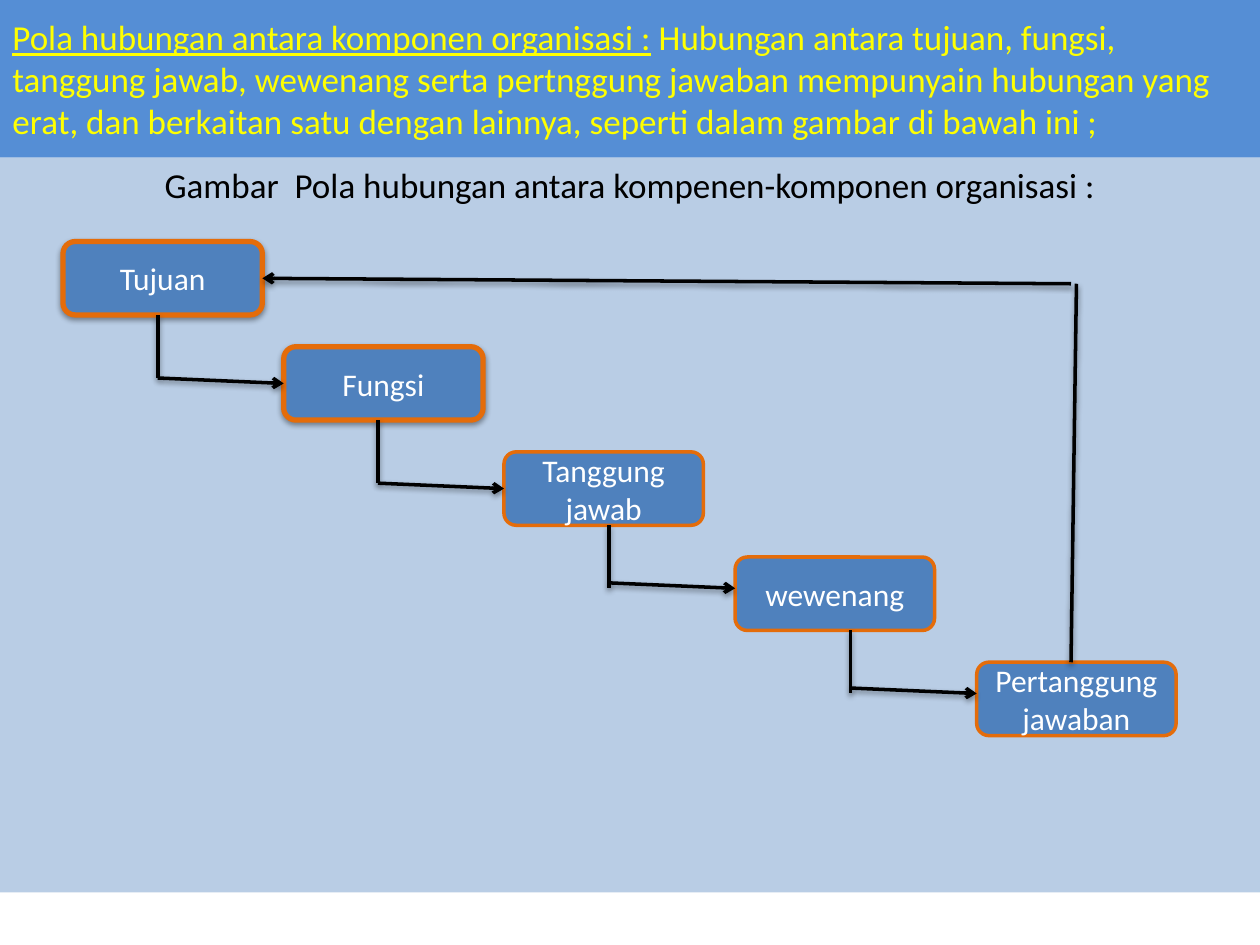
"""Build the slide on how the components of an organisation relate."""
from dataclasses import dataclass

from lxml import etree
from pptx import Presentation, util as u
from pptx.dml.color import RGBColor
from pptx.enum import shapes, text
from pptx.oxml import ns, parse_xml

COLORS = {
    "header": "558ED5",
    "body": "B9CDE5",
    "box": "4F81BD",
    "border": "E46C0A",
    "title": "FFFF00",
    "light": "FFFFFF",
    "dark": "000000",
}
FONT = "Calibri"
WIDTH, HEIGHT = 25.4, 19.05
HEADER_H, BODY_H = 3.18, 14.81
BOX_W, BOX_H = 4.02, 1.48
FIRST_TOP, STEP = 4.87, 2.12
DROP, SLANT = 1.27, 0.11


@dataclass(frozen=True)
class Stage:
    """A box of the staircase, with its exit point and entry offset."""

    label: str
    left: float
    exit_x: float
    border: float = 2
    entry_rise: float = 0
    shadow: bool = False


STAGES = [
    Stage("Tujuan", 1.27, 3.18, border=3, shadow=True),
    Stage("Fungsi", 5.72, 7.62, border=3, shadow=True),
    Stage("Tanggung jawab", 10.16, 12.28),
    Stage("wewenang", 14.82, 17.15, entry_rise=SLANT),
    Stage("Pertanggung jawaban", 19.69, 21.59, entry_rise=SLANT),
]


def rgb(name: str) -> RGBColor:
    """Look up a named colour."""
    return RGBColor.from_string(COLORS[name])


def add_effects(sp, shadow: bool) -> None:
    """Replace the theme effect with a soft drop shadow or with nothing."""
    drop = (
        '<a:outerShdw blurRad="40000" dist="20000" dir="5400000" rotWithShape="0">'
        f'<a:srgbClr val="{COLORS["dark"]}"><a:alpha val="38000"/></a:srgbClr>'
        "</a:outerShdw>"
    )
    sp._element.spPr.append(
        parse_xml(f'<a:effectLst {ns.nsdecls("a")}>{drop if shadow else ""}</a:effectLst>')
    )


def add_block(slide, kind, left: float, top: float, width: float, height: float,
              fill: str, border: float = 0, shadow: bool = False):
    """Add a filled shape and return it."""
    sp = slide.shapes.add_shape(kind, u.Cm(left), u.Cm(top), u.Cm(width), u.Cm(height))
    sp.fill.solid()
    sp.fill.fore_color.rgb = rgb(fill)
    if border:
        sp.line.color.rgb = rgb("border")
        sp.line.width = u.Pt(border)
    else:
        sp.line.fill.background()
    add_effects(sp, shadow)
    return sp


def write(sp, runs: list[str], size: int, color: str, align=text.PP_ALIGN.CENTER,
          anchor=text.MSO_ANCHOR.MIDDLE):
    """Write one paragraph into a shape and return the paragraph."""
    tf = sp.text_frame
    tf.word_wrap = True
    tf.vertical_anchor = anchor
    p = tf.paragraphs[0]
    p.alignment = align
    p.font.name, p.font.size = FONT, u.Pt(size)
    p.font.color.rgb = rgb(color)
    for words in runs:
        p.add_run().text = words
    return p


def add_line(slide, x1: float, y1: float, x2: float, y2: float, arrow: bool = False) -> None:
    """Draw a straight line, with an arrowhead at its end if wanted."""
    line = slide.shapes.add_connector(
        shapes.MSO_CONNECTOR.STRAIGHT, u.Cm(x1), u.Cm(y1), u.Cm(x2), u.Cm(y2))
    line.line.color.rgb = rgb("dark")
    line.line.width = u.Pt(2)
    if arrow:
        ln = line._element.spPr.find(ns.qn("a:ln"))
        etree.SubElement(ln, ns.qn("a:tailEnd"), type="arrow")
    add_effects(line, True)


def add_header(slide) -> None:
    """Add the title band and the captioned body panel."""
    rect = shapes.MSO_SHAPE.RECTANGLE
    sp = add_block(slide, rect, 0, 0, WIDTH, HEADER_H, "header")
    p = write(sp, [
        "Pola hubungan antara komponen organisasi :",
        " Hubungan antara tujuan, fungsi, tanggung jawab, wewenang serta pertnggung "
        "jawaban mempunyain hubungan yang erat, dan berkaitan satu dengan lainnya, "
        "seperti dalam gambar di bawah ini ;",
    ], 20, "title", align=text.PP_ALIGN.LEFT)
    p.runs[0].font.underline = True
    sp = add_block(slide, rect, 0, HEADER_H, WIDTH, BODY_H, "body")
    write(sp, ["Gambar  Pola hubungan antara kompenen-komponen organisasi :"],
          20, "dark", anchor=text.MSO_ANCHOR.TOP)


def add_stages(slide) -> None:
    """Draw the staircase of boxes, its links and the return path."""
    tops = [FIRST_TOP + i * STEP for i in range(len(STAGES))]
    for stage, top in zip(STAGES, tops):
        sp = add_block(slide, shapes.MSO_SHAPE.ROUNDED_RECTANGLE, stage.left, top,
                       BOX_W, BOX_H, "box", stage.border, stage.shadow)
        write(sp, [stage.label], 18, "light")
    for stage, following, top in zip(STAGES, STAGES[1:], tops):
        bottom = top + BOX_H
        entry_y = top + STEP + BOX_H / 2 - following.entry_rise
        add_line(slide, stage.exit_x, bottom, stage.exit_x, bottom + DROP)
        add_line(slide, stage.exit_x, entry_y - SLANT, following.left, entry_y, arrow=True)
    first, last = STAGES[0], STAGES[-1]
    return_y = tops[0] + BOX_H / 2
    corner_y = return_y + SLANT
    add_line(slide, last.exit_x, tops[-1], last.exit_x + SLANT, corner_y)
    add_line(slide, last.exit_x, corner_y, first.left + BOX_W, return_y, arrow=True)


def main() -> None:
    """Build and save the presentation."""
    prs = Presentation()
    prs.slide_width, prs.slide_height = u.Cm(WIDTH), u.Cm(HEIGHT)
    slide = prs.slides.add_slide(prs.slide_layouts[6])
    add_header(slide)
    add_stages(slide)
    prs.save("out.pptx")


if __name__ == "__main__":
    main()
